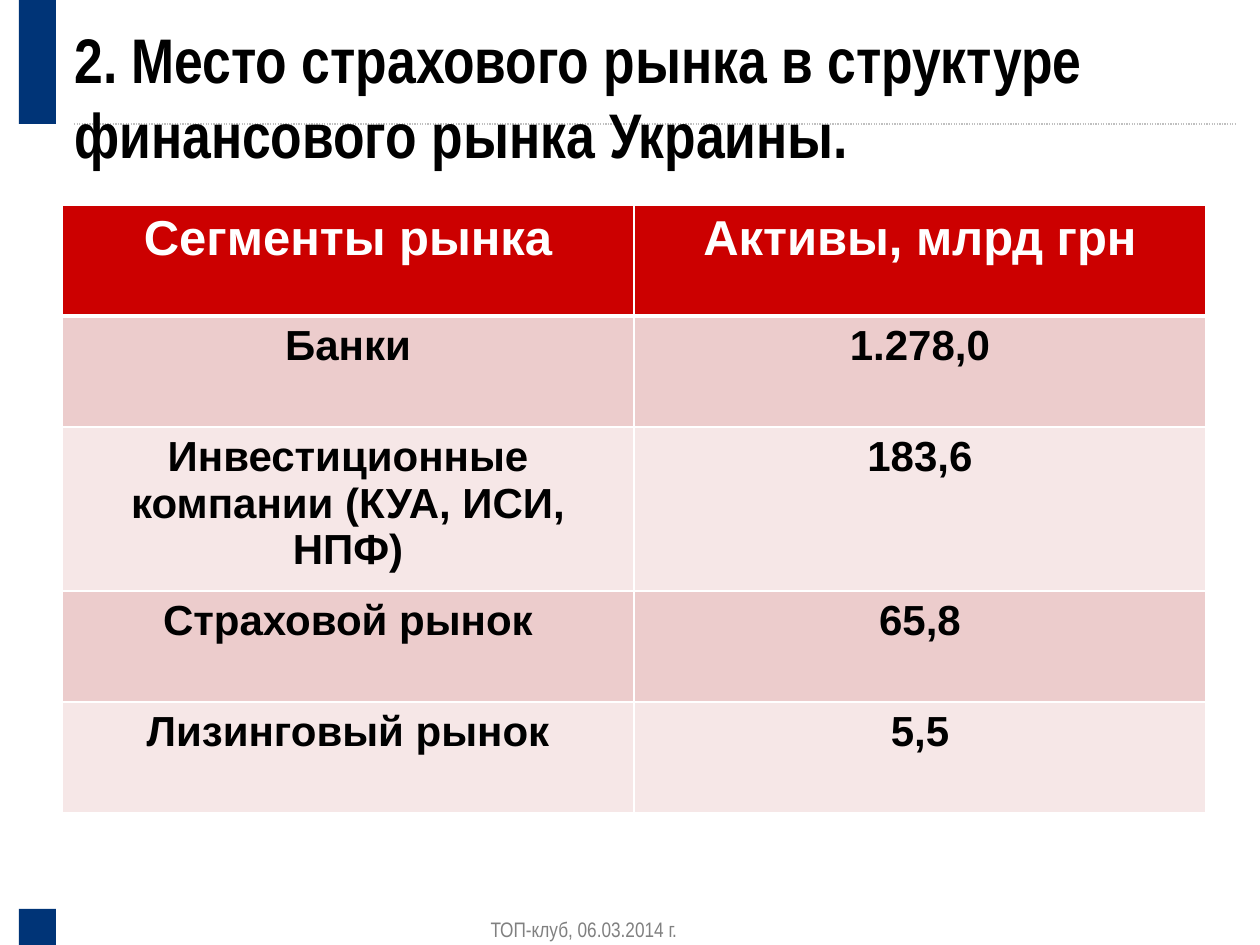
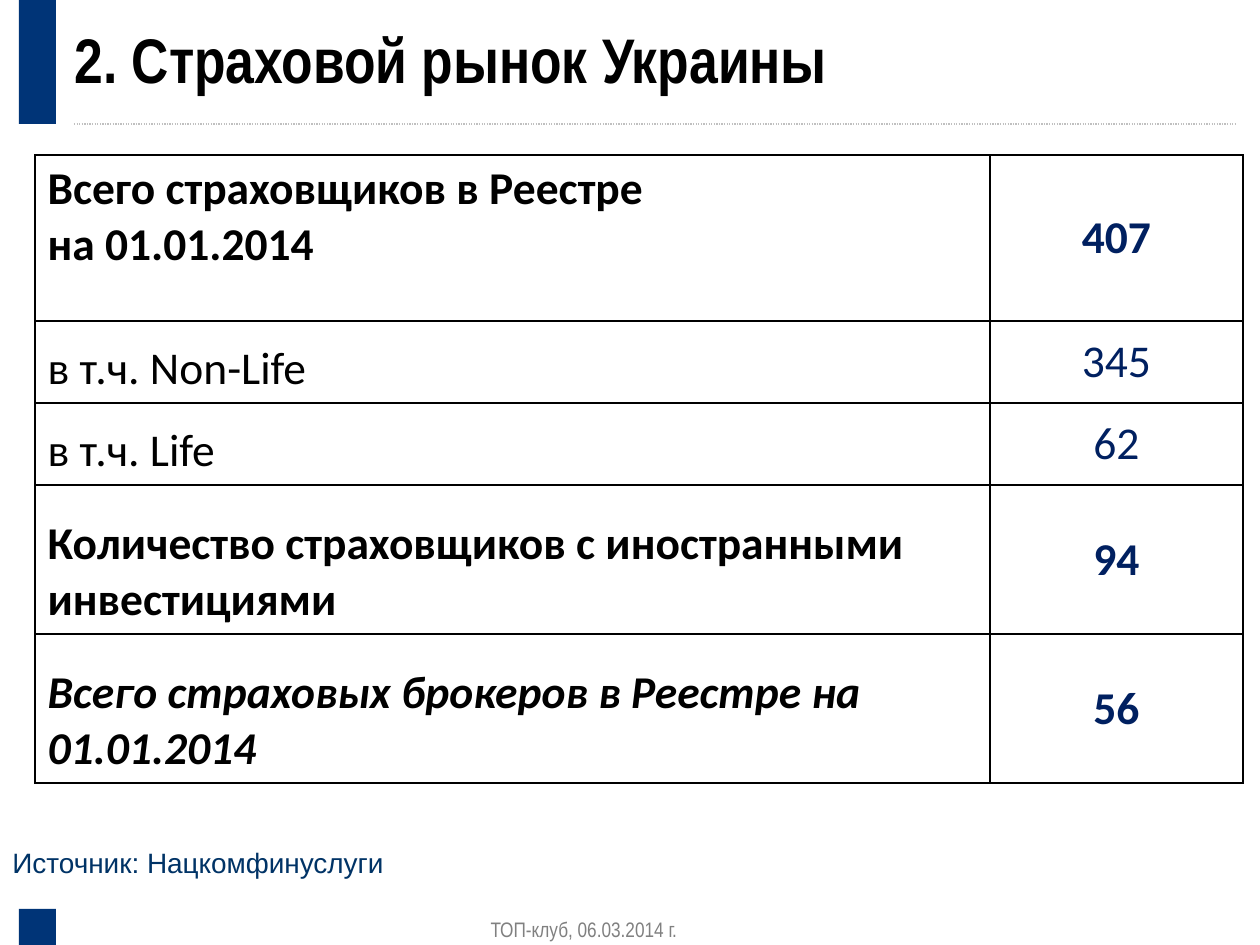
from dataclasses import dataclass
from typing import Optional

from lxml.etree import SubElement
from pptx import Presentation
from pptx.dml.color import RGBColor
from pptx.enum.dml import MSO_LINE
from pptx.enum.shapes import MSO_CONNECTOR, MSO_SHAPE
from pptx.enum.text import MSO_ANCHOR, PP_ALIGN
from pptx.oxml.ns import qn
from pptx.util import Emu, Pt

PX_PER_INCH = 126


@dataclass(frozen=True)
class Theme:
    band: str = "003477"
    rule: str = "C0C0C0"
    footer: str = "808080"
    black: str = "000000"
    white: str = "FFFFFF"
    header: str = "CC0000"
    row_dark: str = "ECCCCC"
    row_light: str = "F6E7E7"
    figure: str = "002060"
    source: str = "003366"
    heading_font: str = "Arial Narrow"
    body_font: str = "Arial"
    register_font: str = "Calibri"
    title_size: int = 36
    header_size: int = 28
    register_size: int = 26
    cell_size: int = 24
    source_size: int = 16
    footer_size: int = 12


THEME = Theme()


@dataclass(frozen=True)
class Box:
    left: int
    top: int
    width: int
    height: int


@dataclass(frozen=True)
class TextStyle:
    font: str
    size: int
    color: str
    bold: bool = False
    italic: bool = False
    align: PP_ALIGN = PP_ALIGN.LEFT


@dataclass(frozen=True)
class Borders:
    color: str
    width: float = 1
    bottom: float = 1


@dataclass(frozen=True)
class Cell:
    lines: tuple[str, ...]
    style: TextStyle
    borders: Borders
    fill: Optional[str] = None
    anchor: MSO_ANCHOR = MSO_ANCHOR.TOP


@dataclass(frozen=True)
class RegisterRow:
    lines: tuple[str, ...]
    count: str
    bold: bool = True
    italic: bool = False
    anchor: MSO_ANCHOR = MSO_ANCHOR.BOTTOM


BANDS = (Box(19, 0, 37, 124), Box(19, 909, 37, 36))
TITLE_BOX = Box(62, 14, 1182, 169)
FOOTER_BOX = Box(60, 910, 1048, 35)
SOURCE_BOX = Box(0, 839, 689, 47)

TITLE = TextStyle(THEME.heading_font, THEME.title_size, THEME.black, bold=True)
FOOTER = TextStyle(THEME.heading_font, THEME.footer_size, THEME.footer, align=PP_ALIGN.CENTER)
SOURCE = TextStyle(THEME.body_font, THEME.source_size, THEME.source)
SEGMENT_HEADER = TextStyle(THEME.body_font, THEME.header_size, THEME.white,
                           bold=True, align=PP_ALIGN.CENTER)
SEGMENT_CELL = TextStyle(THEME.body_font, THEME.cell_size, THEME.black,
                         bold=True, align=PP_ALIGN.CENTER)

SEGMENTS = (
    ("Сегменты рынка", "Активы, млрд грн"),
    ("Банки", "1.278,0"),
    ("Инвестиционные компании (КУА, ИСИ, НПФ)", "183,6"),
    ("Страховой рынок", "65,8"),
    ("Лизинговый рынок", "5,5"),
)
REGISTER = (
    RegisterRow(("Всего страховщиков в Реестре", "на 01.01.2014"), "407", anchor=MSO_ANCHOR.TOP),
    RegisterRow(("в т.ч. Non-Life",), "345", bold=False),
    RegisterRow(("в т.ч. Life",), "62", bold=False),
    RegisterRow(("Количество страховщиков с иностранными инвестициями",), "94"),
    RegisterRow(("Всего страховых брокеров в Реестре на 01.01.2014",), "56", italic=True),
)


def px(length: int) -> Emu:
    return Emu(round(length * 914400 / PX_PER_INCH))


def place(box: Box) -> tuple[Emu, Emu, Emu, Emu]:
    return px(box.left), px(box.top), px(box.width), px(box.height)


def write_lines(text_frame, lines: tuple[str, ...], style: TextStyle) -> None:
    for index, line in enumerate(lines):
        paragraph = text_frame.add_paragraph() if index else text_frame.paragraphs[0]
        paragraph.alignment = style.align
        run = paragraph.add_run()
        run.text = line
        run.font.name = style.font
        run.font.size = Pt(style.size)
        run.font.bold = style.bold
        run.font.italic = style.italic
        run.font.color.rgb = RGBColor.from_string(style.color)


def add_text(slide, box: Box, text: str, style: TextStyle) -> None:
    text_frame = slide.shapes.add_textbox(*place(box)).text_frame
    text_frame.word_wrap = True
    write_lines(text_frame, (text,), style)


def add_band(slide, box: Box) -> None:
    shape = slide.shapes.add_shape(MSO_SHAPE.RECTANGLE, *place(box))
    shape.shadow.inherit = False
    shape.fill.solid()
    shape.fill.fore_color.rgb = RGBColor.from_string(THEME.band)
    shape.line.fill.background()


def add_title_rule(slide) -> None:
    rule = slide.shapes.add_connector(MSO_CONNECTOR.STRAIGHT, px(74), px(124), px(1235), px(124))
    rule.line.color.rgb = RGBColor.from_string(THEME.rule)
    rule.line.width = Pt(0.75)
    rule.line.dash_style = MSO_LINE.ROUND_DOT
    SubElement(rule._element.spPr, qn("a:effectLst"))


def add_framed_slide(presentation, title: str):
    """Add a blank slide with the shared rule, bands, footer and its title."""
    slide = presentation.slides.add_slide(presentation.slide_layouts[6])
    add_title_rule(slide)
    for band in BANDS:
        add_band(slide, band)
    add_text(slide, FOOTER_BOX, "ТОП-клуб, 06.03.2014 г.", FOOTER)
    add_text(slide, TITLE_BOX, title, TITLE)
    return slide


def draw_borders(table_cell, borders: Borders) -> None:
    properties = table_cell._tc.get_or_add_tcPr()
    for side in ("L", "R", "T", "B"):
        width = borders.bottom if side == "B" else borders.width
        line = SubElement(properties, qn(f"a:ln{side}"), w=str(Pt(width)))
        SubElement(SubElement(line, qn("a:solidFill")), qn("a:srgbClr"), val=borders.color)


def fill_cell(table_cell, cell: Cell) -> None:
    draw_borders(table_cell, cell.borders)
    if cell.fill:
        table_cell.fill.solid()
        table_cell.fill.fore_color.rgb = RGBColor.from_string(cell.fill)
    else:
        table_cell.fill.background()
    table_cell.vertical_anchor = cell.anchor
    write_lines(table_cell.text_frame, cell.lines, cell.style)


def add_grid(slide, left: int, top: int, widths: tuple[int, ...], heights: tuple[int, ...],
             rows: list[tuple[Cell, ...]]) -> None:
    box = Box(left, top, sum(widths), sum(heights))
    table = slide.shapes.add_table(len(heights), len(widths), *place(box)).table
    table.first_row = table.horz_banding = False
    for column, width in zip(table.columns, widths):
        column.width = px(width)
    for row, height, cells in zip(table.rows, heights, rows):
        row.height = px(height)
        for table_cell, cell in zip(row.cells, cells):
            fill_cell(table_cell, cell)


def segment_cells(index: int, texts: tuple[str, str]) -> tuple[Cell, ...]:
    if index == 0:
        style, fill, bottom = SEGMENT_HEADER, THEME.header, 3
    else:
        style, bottom = SEGMENT_CELL, 1
        fill = THEME.row_dark if index % 2 else THEME.row_light
    top = 3 if index == 1 else 1
    borders = Borders(THEME.white, width=top, bottom=bottom) if top == 1 else Borders(THEME.white)
    return tuple(Cell((text,), style, borders, fill) for text in texts)


def register_cells(row: RegisterRow) -> tuple[Cell, Cell]:
    label = TextStyle(THEME.register_font, THEME.register_size, THEME.black, row.bold, row.italic)
    count = TextStyle(THEME.register_font, THEME.register_size, THEME.figure, row.bold,
                      align=PP_ALIGN.CENTER)
    borders = Borders(THEME.black)
    return (Cell(row.lines, label, borders, anchor=row.anchor),
            Cell((row.count,), count, borders, anchor=MSO_ANCHOR.MIDDLE))


def add_segments_slide(presentation) -> None:
    slide = add_framed_slide(
        presentation, "2. Место страхового рынка в структуре финансового рынка Украины.")
    rows = [segment_cells(index, texts) for index, texts in enumerate(SEGMENTS)]
    add_grid(slide, 62, 205, (572, 572), (111, 111, 163, 111, 111), rows)


def add_register_slide(presentation) -> None:
    slide = add_framed_slide(presentation, "2. Страховой рынок Украины")
    rows = [register_cells(row) for row in REGISTER]
    add_grid(slide, 35, 155, (955, 253), (166, 82, 82, 149, 149), rows)
    add_text(slide, SOURCE_BOX, "Источник: Нацкомфинуслуги", SOURCE)


def main() -> None:
    presentation = Presentation()
    presentation.slide_width = px(1260)
    presentation.slide_height = px(945)
    add_segments_slide(presentation)
    add_register_slide(presentation)
    presentation.save("out.pptx")


if __name__ == "__main__":
    main()
